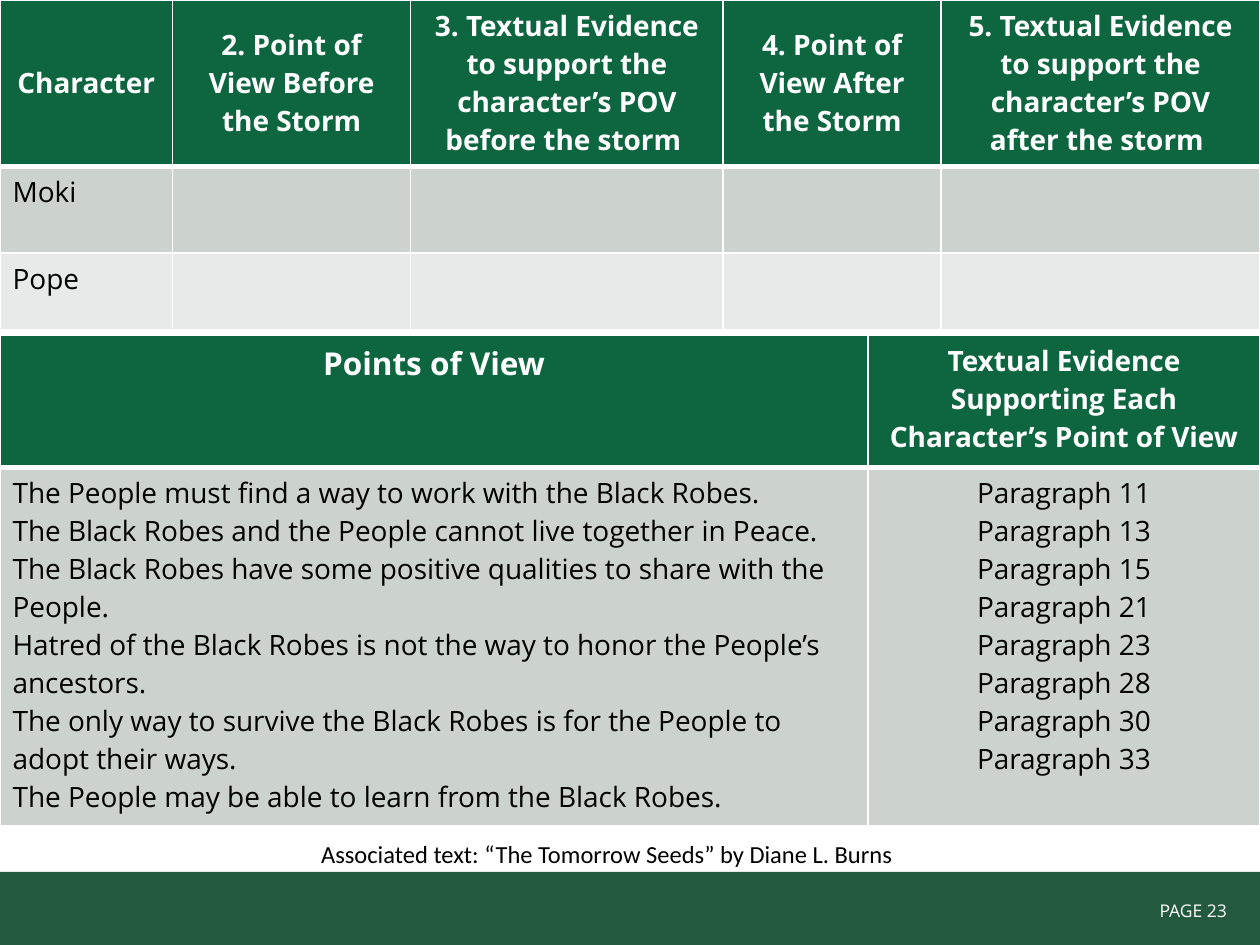
import pptx
import pptx.dml.color
import pptx.enum.shapes
import pptx.enum.text
import pptx.oxml.ns
import pptx.util
from lxml import etree

Inches, Pt = pptx.util.Inches, pptx.util.Pt
ALIGN = pptx.enum.text.PP_ALIGN
ANCHOR = pptx.enum.text.MSO_ANCHOR

COLORS = {
    "white": "FFFFFF",
    "black": "000000",
    "header": "0E6641",
    "band_dark": "CCD3CF",
    "band_light": "E7EAE9",
    "footer": "23593E",
}

POV_HEADERS = [
    "Character",
    "2. Point of View Before the Storm",
    "3. Textual Evidence to support the character’s POV before the storm ",
    "4. Point of View After the Storm",
    "5. Textual Evidence to support the character’s POV after the storm ",
]
CHARACTERS = ["Moki", "Pope"]
VIEWS = [
    "The People must find a way to work with the Black Robes.",
    "The Black Robes and the People cannot live together in Peace.",
    "The Black Robes have some positive qualities to share with the People.",
    "Hatred of the Black Robes is not the way to honor the People’s ancestors.",
    "The only way to survive the Black Robes is for the People to adopt their ways.",
    "The People may be able to learn from the Black Robes.",
]
EVIDENCE = [f"Paragraph {n}" for n in (11, 13, 15, 21, 23, 28, 30, 33)]


def rgb(name):
    return pptx.dml.color.RGBColor.from_string(COLORS[name])


def write(tf, text, size, color, font="Open Sans", bold=False, align=ALIGN.LEFT):
    tf.text = text
    for p in tf.paragraphs:
        p.alignment = align
        for r in p.runs:
            r.font.name = font
            r.font.size = Pt(size)
            r.font.bold = bold
            r.font.color.rgb = rgb(color)


def set_borders(cell, top, bottom):
    tc_pr = cell._tc.get_or_add_tcPr()
    qn = pptx.oxml.ns.qn
    for side, width in (("L", 1), ("R", 1), ("T", top), ("B", bottom)):
        ln = etree.SubElement(tc_pr, qn(f"a:ln{side}"), w=str(Pt(width)))
        fill = etree.SubElement(ln, qn("a:solidFill"))
        etree.SubElement(fill, qn("a:srgbClr"), val=COLORS["white"])


def add_grid(slide, box, col_widths, row_heights):
    """Add a table with a header row, banded body rows and white rules."""
    frame = slide.shapes.add_table(len(row_heights), len(col_widths), *map(Inches, box))
    table = frame.table
    for col, width in zip(table.columns, col_widths):
        col.width = Inches(width)
    for row, height in zip(table.rows, row_heights):
        row.height = Inches(height)
    fills = ["header", "band_dark", "band_light"]
    for i, row in enumerate(table.rows):
        for cell in row.cells:
            set_borders(cell, top=3 if i == 1 else 1, bottom=3 if i == 0 else 1)
            cell.fill.solid()
            cell.fill.fore_color.rgb = rgb(fills[i])
    return table


def add_text(slide, box, text, size, color, font, align):
    tf = slide.shapes.add_textbox(*map(Inches, box)).text_frame
    tf.word_wrap = True
    write(tf, text, size, color, font, align=align)


def add_character_table(slide, box):
    table = add_grid(slide, box, [1.37, 1.89, 2.48, 1.73, 2.53], [1.32, 0.69, 0.61])
    for col, text in enumerate(POV_HEADERS):
        cell = table.cell(0, col)
        cell.vertical_anchor = ANCHOR.MIDDLE
        write(cell.text_frame, text, 16, "white", bold=True, align=ALIGN.CENTER)
    for row, name in enumerate(CHARACTERS, start=1):
        write(table.cell(row, 0).text_frame, name, 16, "black")


def add_evidence_table(slide, box):
    table = add_grid(slide, box, [6.89, 3.11], [1.05, 2.84])
    headers = [("Points of View", 18),
               ("Textual Evidence Supporting Each Character’s Point of View", 16)]
    for col, (text, size) in enumerate(headers):
        write(table.cell(0, col).text_frame, text, size, "white",
              bold=True, align=ALIGN.CENTER)
    columns = [(VIEWS, ALIGN.LEFT), (EVIDENCE, ALIGN.CENTER)]
    for col, (lines, align) in enumerate(columns):
        write(table.cell(1, col).text_frame, "\n".join(lines), 16, "black", align=align)


def add_footer(slide, box):
    left, top, width, height = box
    bar = slide.shapes.add_shape(pptx.enum.shapes.MSO_SHAPE.RECTANGLE, *map(Inches, box))
    bar.shadow.inherit = False
    bar.fill.solid()
    bar.fill.fore_color.rgb = rgb("footer")
    bar.line.fill.background()
    add_text(slide, (left + width - 1.73, top + 0.17, 1.59, 0.27), "PAGE 23 ",
             10, "white", "Open Sans", ALIGN.RIGHT)


def main():
    prs = pptx.Presentation()
    prs.slide_width, prs.slide_height = Inches(10), Inches(7.5)
    slide = prs.slides.add_slide(prs.slide_layouts[6])

    # Footer bar with page number
    add_footer(slide, (0, 6.92, 10.01, 0.59))
    # Characters before and after the storm
    add_character_table(slide, (0, 0, 10, 2.62))
    # Source text credit
    add_text(slide, (2.31, 6.61, 5.06, 0.35),
             "Associated text: “The Tomorrow Seeds” by Diane L. Burns ",
             14, "black", "Calibri", ALIGN.CENTER)
    # Answer choices
    add_evidence_table(slide, (0, 2.66, 10, 3.89))

    prs.save("out.pptx")


if __name__ == "__main__":
    main()
